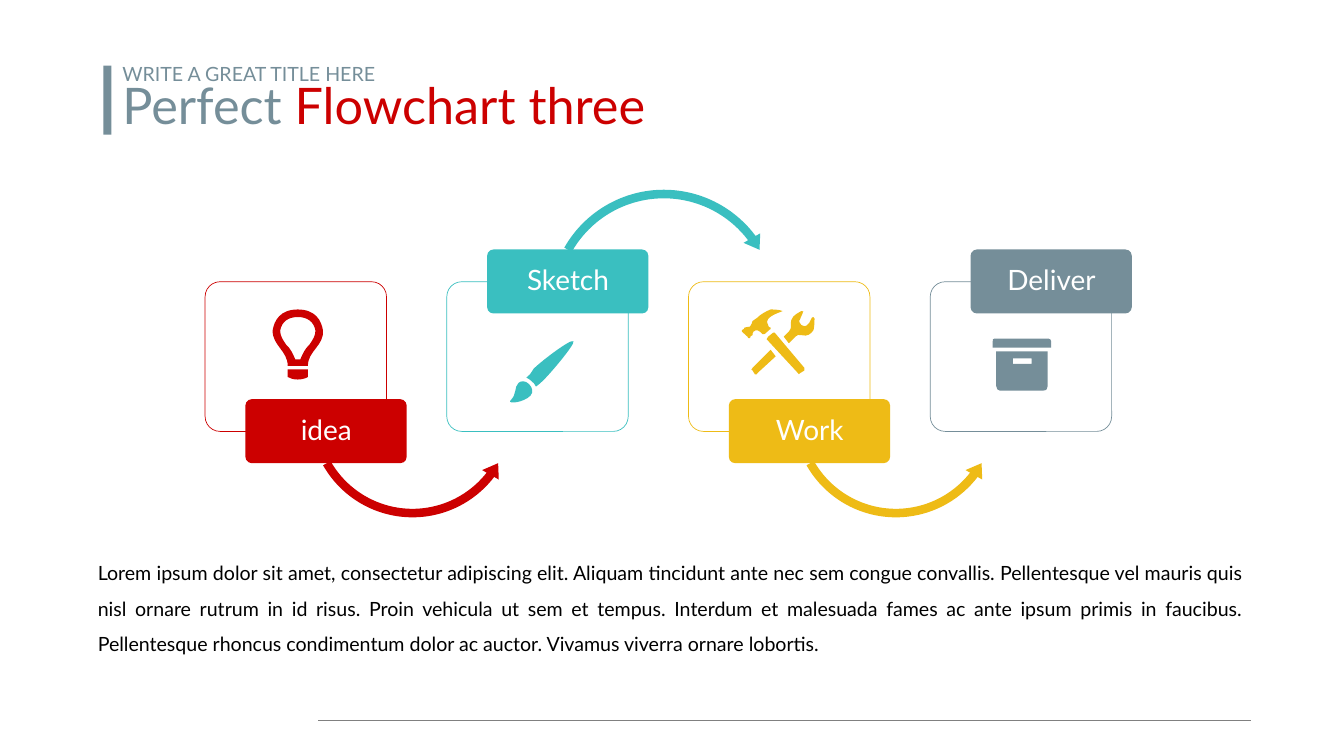
from lxml import etree
from pptx import Presentation
from pptx.dml.color import RGBColor
from pptx.enum.shapes import MSO_CONNECTOR, MSO_SHAPE
from pptx.enum.text import MSO_ANCHOR, MSO_AUTO_SIZE, PP_ALIGN
from pptx.oxml.ns import qn
from pptx.util import Inches, Pt

RECT, ROUND = MSO_SHAPE.RECTANGLE, MSO_SHAPE.ROUNDED_RECTANGLE
ARC_OVER, ARC_UNDER = MSO_SHAPE.CIRCULAR_ARROW, MSO_SHAPE.LEFT_CIRCULAR_ARROW
STRAIGHT = MSO_CONNECTOR.STRAIGHT
TOP, MIDDLE = MSO_ANCHOR.TOP, MSO_ANCHOR.MIDDLE
LEFT, CENTER, JUSTIFY = PP_ALIGN.LEFT, PP_ALIGN.CENTER, PP_ALIGN.JUSTIFY
GROW, FIXED = MSO_AUTO_SIZE.SHAPE_TO_FIT_TEXT, MSO_AUTO_SIZE.NONE

COLS, ROWS = 26.67, 15
FONT = "Lato"
COLORS = {"red": "CC0000", "teal": "3ABFC0", "gold": "EEBB16", "slate": "758E99",
          "rule": "808080", "black": "000000", "white": "FFFFFF"}

FIRST_COL, LAST_COL = 4.07, 18.46
ARC_WIDTH, ARC_HEAD = 0.17, 0.19
ANGLE_UNIT = 0.6

BULB = [
    [(30, 134), (35, 137, 42, 139, 50, 139), (57, 139, 65, 137, 70, 134), (70, 119), (30, 119)],
    [(70, 112), (70, 82, 102, 72, 100, 42), (97, 22, 85, 0, 50, 0), (15, 0, 3, 22, 0, 42),
     (0, 72, 30, 82, 30, 112)],
    [(15, 42), (18, 25, 30, 15, 50, 15), (70, 15, 82, 25, 85, 42), (85, 52, 80, 60, 73, 70),
     (65, 77, 60, 87, 55, 99), (45, 99), (40, 87, 35, 77, 27, 70), (20, 60, 15, 52, 15, 42)],
]
BRUSH = [
    [(21, 88), (12, 97, 19, 109, 5, 123), (0, 130, 31, 127, 45, 113),
     (51, 106, 49, 97, 42, 90), (35, 83, 26, 83, 21, 88)],
    [(130, 5), (125, 0, 67, 44, 51, 60), (45, 70, 42, 74, 37, 77), (40, 79),
     (42, 81, 45, 81, 49, 86), (51, 88, 54, 90, 54, 92), (56, 95),
     (60, 92, 65, 88, 72, 81), (88, 65, 135, 9, 130, 5)],
]
TOOLS = [
    [(23, 44), (28, 39, 34, 41, 41, 49), (44, 49), (47, 49, 54, 39, 57, 39), (57, 36),
     (54, 36, 52, 34, 52, 31), (39, 13, 87, 3, 80, 3), (75, 0, 59, 0, 57, 0),
     (49, 3, 36, 10, 31, 16), (21, 23), (18, 26, 21, 31, 16, 34), (11, 36, 8, 34, 5, 36),
     (5, 39, 3, 39, 0, 41), (0, 44), (11, 54), (11, 57, 13, 57, 16, 57),
     (16, 54, 18, 51, 21, 51), (21, 51, 21, 44, 23, 44)],
    [(65, 46), (62, 46), (52, 54), (49, 57, 49, 57, 49, 59), (111, 126),
     (111, 129, 114, 129, 116, 126), (124, 121), (124, 116)],
    [(144, 18), (142, 13, 142, 16, 139, 16), (139, 18, 134, 23, 134, 26),
     (131, 31, 126, 36, 118, 31), (111, 23, 114, 21, 116, 18), (116, 16, 121, 8, 121, 5),
     (124, 5, 121, 3, 118, 3), (116, 5, 101, 10, 98, 21), (95, 28, 101, 36, 93, 44),
     (83, 54), (93, 67), (106, 54), (108, 51, 114, 49, 118, 51),
     (131, 54, 136, 49, 142, 41), (144, 34, 144, 21, 144, 18)],
    [(21, 116), (18, 118, 18, 121, 21, 121), (26, 129), (28, 129, 31, 129, 31, 126),
     (67, 93), (57, 80)],
]
ARCHIVE = [
    [(111, 0), (3, 0), (0, 0, 0, 2, 0, 5), (0, 18), (116, 18), (116, 5), (116, 2, 113, 0, 111, 0)],
    [(7, 94), (7, 99, 10, 103, 14, 103), (100, 103), (107, 103, 109, 99, 109, 94),
     (109, 25), (7, 25)],
    [(40, 39), (77, 39), (77, 50), (40, 50)],
]

STEPS = [
    ("idea", "red", BULB, 1.34, 6.14, "under"),
    ("Sketch", "teal", BRUSH, 1.21, 6.72, "over"),
    ("Work", "gold", TOOLS, 1.06, 6.14, "under"),
    ("Deliver", "slate", ARCHIVE, 1.24, 6.72, None),
]
ARCS = {
    "under": (ARC_UNDER, 1.97, 6.08, 4.29, 8.11, 37.7, 150.41),
    "over": (ARC_OVER, 1.93, 3.66, 4.75, 7.26, 323.15, 209.59),
}
BODY = ("Lorem ipsum dolor sit amet, consectetur adipiscing elit. Aliquam tincidunt ante nec sem "
        "congue convallis. Pellentesque vel mauris quis nisl ornare rutrum in id risus. Proin "
        "vehicula ut sem et tempus. Interdum et malesuada fames ac ante ipsum primis in faucibus. "
        "Pellentesque rhoncus condimentum dolor ac auctor. Vivamus viverra ornare lobortis.")


def rgb(name):
    return RGBColor.from_string(COLORS[name])


def write(tf, runs, size, align=LEFT, anchor=TOP, spacing=1.0, inset=(0.1, 0.05), grow=True):
    tf.word_wrap = True
    tf.auto_size = GROW if grow else FIXED
    tf.vertical_anchor = anchor
    tf.margin_left = tf.margin_right = Inches(inset[0])
    tf.margin_top = tf.margin_bottom = Inches(inset[1])
    p = tf.paragraphs[0]
    p.alignment, p.line_spacing = align, spacing
    for text, color in runs:
        r = p.add_run()
        r.text = text
        r.font.name, r.font.size = FONT, Pt(size)
        r.font.color.rgb = rgb(color)


class Deck:
    def __init__(self):
        self.prs = Presentation()
        self.prs.slide_width, self.prs.slide_height = Inches(COLS), Inches(ROWS)
        self.slide = self.prs.slides.add_slide(self.prs.slide_layouts[6])
        self.col, self.row = self.prs.slide_width / COLS, self.prs.slide_height / ROWS

    def grid(self, x, y):
        return round(x * self.col), round(y * self.row)

    def paint(self, sp, fill=None, line=None):
        sp.shadow.inherit = False
        if fill:
            sp.fill.solid()
            sp.fill.fore_color.rgb = rgb(fill)
        else:
            sp.fill.background()
        if line:
            sp.line.color.rgb, sp.line.width = rgb(line), Pt(1)
        else:
            sp.line.fill.background()

    def shape(self, kind, x, y, w, h, fill=None, line=None, adj=()):
        sp = self.slide.shapes.add_shape(kind, *self.grid(x, y), *self.grid(w, h))
        for i, value in enumerate(adj):
            sp.adjustments[i] = value
        self.paint(sp, fill, line)

    def text(self, x, y, w, h, runs, **style):
        sp = self.slide.shapes.add_textbox(*self.grid(x, y), *self.grid(w, h))
        write(sp.text_frame, runs, **style)

    def rule(self, x1, x2, y, color):
        sp = self.slide.shapes.add_connector(STRAIGHT, *self.grid(x1, y), *self.grid(x2, y))
        sp.line.color.rgb, sp.line.width = rgb(color), Pt(1)
        etree.SubElement(sp._element.spPr, qn("a:effectLst"))

    def icon(self, contours, x, y, color):
        def place(px, py):
            return self.grid(x + px / 100, y + py / 100)

        builder = self.slide.shapes.build_freeform(*place(*contours[0][0]), scale=1.0)
        for i, (start, *segments) in enumerate(contours):
            if i:
                builder.move_to(*place(*start))
            builder.add_line_segments([place(*seg[-2:]) for seg in segments], close=True)
        sp = builder.convert_to_shape()
        segments = [seg for contour in contours for seg in contour[1:]]
        for node, seg in zip(list(sp._element.iter(qn("a:lnTo"))), segments):
            if len(seg) == 6:
                self.bend(node, [place(*seg[k:k + 2]) for k in (0, 2)], sp)
        self.paint(sp, color)

    def bend(self, node, controls, sp):
        node.tag = qn("a:cubicBezTo")
        for i, (cx, cy) in enumerate(controls):
            pt = etree.Element(qn("a:pt"), x=str(cx - sp.left), y=str(cy - sp.top))
            node.insert(i, pt)

    def arc(self, name, x, color):
        kind, dx, y, size, head, end, start = ARCS[name]
        angles = [a * ANGLE_UNIT for a in (head, end, start)]
        adj = [ARC_WIDTH / size, *angles, ARC_HEAD / size]
        self.shape(kind, x + dx, y, size, size, color, adj=adj)

    def step(self, x, label, color, icon, icon_dx, icon_y, arc):
        self.shape(ROUND, x, 5.59, 3.6, 2.97, line=color, adj=[0.1])
        if arc:
            self.arc(arc, x, color)
        tag_y = 7.92 if arc == "under" else 4.95
        self.shape(ROUND, x + 0.8, tag_y, 3.2, 1.27, color, adj=[0.1])
        self.text(x + 0.84, tag_y + 0.04, 3.13, 1.2, [(label, "white")], size=40, align=CENTER,
                  anchor=MIDDLE, spacing=0.9, inset=(0.08, 0.06), grow=False)
        self.icon(icon, x + icon_dx, icon_y, color)


def main():
    deck = Deck()
    deck.rule(6.32, 24.83, 14.3, "rule")
    pitch = (LAST_COL - FIRST_COL) / (len(STEPS) - 1)
    for i, step in enumerate(STEPS):
        deck.step(FIRST_COL + i * pitch, *step)
    deck.text(1.67, 10.78, 23.25, 2.35, [(BODY, "black")], size=28, align=JUSTIFY,
              anchor=MIDDLE, spacing=1.5, inset=(0.27, 0.13))
    deck.text(2.33, 1.65, 15.34, 1.11, [("Perfect ", "slate"), ("Flowchart three", "red")],
              size=72, spacing=0.8)
    deck.text(2.33, 1.18, 9.58, 0.57, [("WRITE A GREAT TITLE HERE", "slate")], size=28)
    deck.shape(RECT, 2.05, 1.3, 0.16, 1.37, "slate")
    deck.prs.save("out.pptx")


if __name__ == "__main__":
    main()
